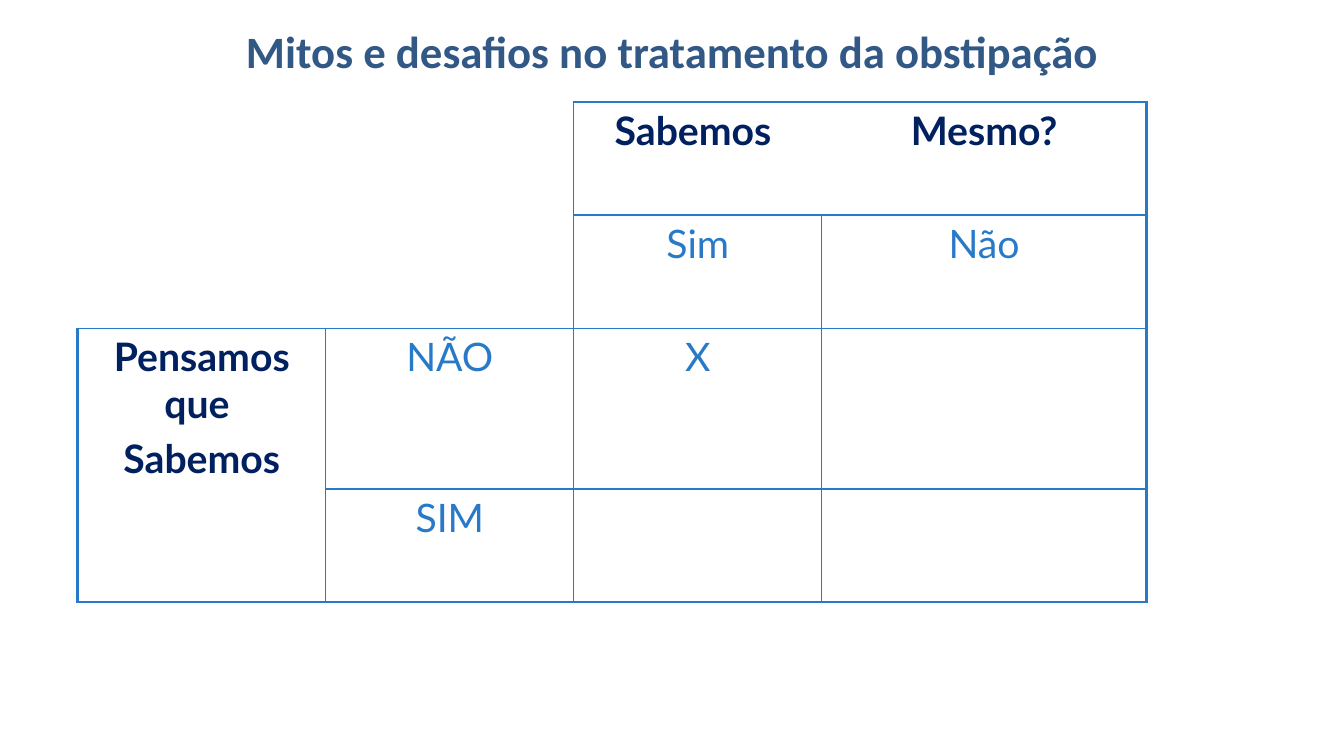
from lxml.etree import SubElement
from pptx import Presentation
from pptx.dml.color import RGBColor
from pptx.enum.text import MSO_ANCHOR, PP_ALIGN
from pptx.oxml.ns import qn
from pptx.util import Cm, Pt

TITLE_BLUE = RGBColor(0x32, 0x58, 0x86)
NAVY = RGBColor(0x00, 0x20, 0x60)
BLUE = RGBColor(0x28, 0x7A, 0xC8)

COLUMN_WIDTHS = [6.25, 6.25, 6.25, 8.18]
ROW_HEIGHTS = [2.85, 2.85, 4.05, 2.85]
ANSWERS = [
    ["", "", "Sabemos ", "Mesmo?"],
    ["", "", "Sim", "Não"],
    ["Pensamos que \nSabemos", "NÃO", "X", ""],
    ["", "SIM", "", ""],
]
HEADINGS = {(0, 2), (0, 3), (2, 0)}
# Neighbouring cells that read as one heading, with no line between them
JOINED = [{(0, 2), (0, 3)}, {(2, 0), (3, 0)}]
SIDES = {"a:lnL": (0, -1), "a:lnR": (0, 1), "a:lnT": (-1, 0), "a:lnB": (1, 0)}


def in_matrix(row, column):
    """The top left corner of the grid stays empty."""
    return 0 <= row < 4 and 0 <= column < 4 and (row >= 2 or column >= 2)


def border_width(here, neighbour):
    """Heavy on the outer edge of the grid, thin inside, none in a heading."""
    if {here, neighbour} in JOINED or not (in_matrix(*here) or in_matrix(*neighbour)):
        return 0
    on_grid = all(0 <= index < 4 for index in neighbour)
    return 1 if on_grid else 2.25


def draw_borders(cell, row, column):
    properties = cell._tc.get_or_add_tcPr()
    for tag, (down, right) in SIDES.items():
        width = border_width((row, column), (row + down, column + right))
        line = SubElement(properties, qn(tag), w=str(int(Pt(width))))
        if width:
            fill = SubElement(line, qn("a:solidFill"))
            SubElement(fill, qn("a:srgbClr"), val=str(BLUE))
        else:
            SubElement(line, qn("a:noFill"))


def write_answer(cell, answer, is_heading):
    cell.text = answer
    for number, paragraph in enumerate(cell.text_frame.paragraphs):
        paragraph.alignment = PP_ALIGN.CENTER
        if number:
            paragraph.space_before = Pt(5.6)
        paragraph.font.name = "Lato"
        paragraph.font.size = Pt(28)
        paragraph.font.bold = is_heading
        paragraph.font.color.rgb = NAVY if is_heading else BLUE


def add_title(slide, left, top, width, height):
    title = slide.shapes.title
    title.left, title.top, title.width, title.height = left, top, width, height
    title.text_frame.text = "Mitos e desafios no tratamento da obstipação"
    title.text_frame.vertical_anchor = MSO_ANCHOR.MIDDLE
    heading = title.text_frame.paragraphs[0]
    heading.alignment = PP_ALIGN.CENTER
    heading.font.name = "Calibri"
    heading.font.size = Pt(32)
    heading.font.bold = True
    heading.font.color.rgb = TITLE_BLUE


def add_knowledge_matrix(slide, left, top, width, height):
    matrix = slide.shapes.add_table(4, 4, left, top, width, height).table
    matrix.first_row = matrix.horz_banding = False
    for column, column_width in zip(matrix.columns, COLUMN_WIDTHS):
        column.width = int(width * column_width / sum(COLUMN_WIDTHS))
    for row, row_height in zip(matrix.rows, ROW_HEIGHTS):
        row.height = int(height * row_height / sum(ROW_HEIGHTS))
    for row, answers in enumerate(ANSWERS):
        for column, answer in enumerate(answers):
            cell = matrix.cell(row, column)
            draw_borders(cell, row, column)
            cell.fill.background()
            write_answer(cell, answer, (row, column) in HEADINGS)


def main():
    presentation = Presentation()
    presentation.slide_width = Cm(33.87)
    presentation.slide_height = Cm(19.05)
    slide = presentation.slides.add_slide(presentation.slide_layouts[5])
    # Title
    add_title(slide, Cm(1.7), Cm(0.43), Cm(30.48), Cm(1.68))
    # Matrix of what we know against what we think we know
    add_knowledge_matrix(slide, Cm(1.96), Cm(2.57),
                         Cm(sum(COLUMN_WIDTHS)), Cm(sum(ROW_HEIGHTS)))
    presentation.save("out.pptx")


if __name__ == "__main__":
    main()
